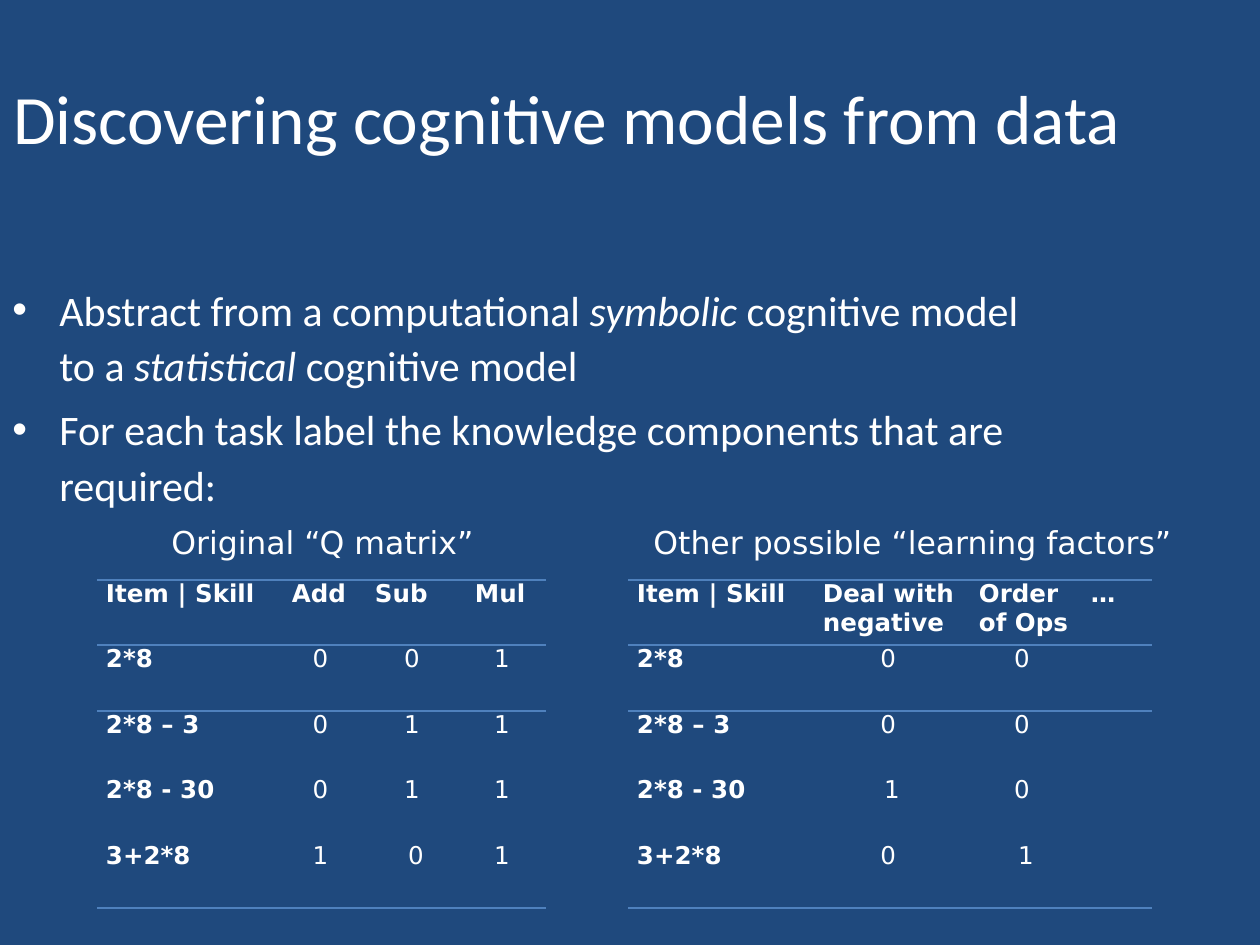
"""Build the slide on discovering cognitive models from data."""
from lxml.etree import SubElement
from pptx import Presentation
from pptx.dml.color import RGBColor
from pptx.enum.text import MSO_ANCHOR, PP_ALIGN
from pptx.oxml.ns import qn
from pptx.util import Pt

PX = 914400 / 126
NAVY = RGBColor(0x1F, 0x49, 0x7D)
WHITE = RGBColor(0xFF, 0xFF, 0xFF)
RULE_BLUE = RGBColor(0x4F, 0x81, 0xBD)
NO_GRID_STYLE = "{2D5ABB26-0587-4C30-8999-92F81FD0307C}"
ROW_HEIGHTS = (65, 66, 65, 66, 66)
TABLE_TOP, CAPTION_TOP = 580, 517


def px(*lengths):
    return [round(length * PX) for length in lengths]


def style(font, name, size, bold=False):
    font.name, font.size, font.bold = name, Pt(size), bold
    font.color.rgb = WHITE


deck = Presentation()
deck.slide_width, deck.slide_height = px(1260, 945)
slide = deck.slides.add_slide(deck.slide_layouts[5])
slide.background.fill.solid()
slide.background.fill.fore_color.rgb = NAVY

title = slide.shapes.title
title.left, title.top, title.width, title.height = px(0, 38, 1134, 157)
title.text_frame.text = "Discovering cognitive models from data"
title.text_frame.vertical_anchor = MSO_ANCHOR.MIDDLE
heading = title.text_frame.paragraphs[0]
heading.alignment = PP_ALIGN.CENTER
style(heading.runs[0].font, "Calibri", 39.6)

points = [
    [("Abstract from a computational ", False), ("symbolic ", True),
     ("cognitive model to a ", False), ("statistical", True),
     (" cognitive model", False)],
    [("For each task label the knowledge components that are required:", False)],
]
body = slide.shapes.add_textbox(*px(0, 273, 1071, 354)).text_frame
body.word_wrap = True
for index, pieces in enumerate(points):
    point = body.add_paragraph() if index else body.paragraphs[0]
    point.line_spacing = 1.1
    point.space_before = Pt(5 if index else 0)
    indent = px(47)[0]
    properties = point._p.get_or_add_pPr()
    properties.set("marL", str(indent))
    properties.set("indent", str(-indent))
    SubElement(properties, qn("a:buFont"), typeface="Arial")
    SubElement(properties, qn("a:buChar"), char="•")
    for words, italic in pieces:
        run = point.add_run()
        run.text = words
        style(run.font, "Calibri", 24)
        run.font.italic = italic

matrices = [
    ("Original “Q matrix”", (159, 350), 97, (186, 83, 100, 80), [
        ("Item | Skill", "Add", "Sub", "Mul"),
        ("2*8", "0 ", "0 ", "1 "),
        ("2*8 – 3", "0 ", "1 ", "1 "),
        ("2*8 - 30", "0 ", "1 ", "1 "),
        ("3+2*8", "1 ", "0", "1 "),
    ]),
    ("Other possible “learning factors”", (641, 548), 628, (186, 156, 112, 70), [
        ("Item | Skill", "Deal with negative", "Order of Ops", "…"),
        ("2*8", "0 ", "0 ", ""),
        ("2*8 – 3", "0 ", "0 ", ""),
        ("2*8 - 30", "1", "0 ", ""),
        ("3+2*8", "0 ", "1", ""),
    ]),
]
for caption, (caption_left, caption_width), left, widths, rows in matrices:
    label = slide.shapes.add_textbox(
        *px(caption_left, CAPTION_TOP, caption_width, 50)).text_frame
    label.word_wrap = True
    label.text = caption
    style(label.paragraphs[0].runs[0].font, "DejaVu Sans", 18)

    matrix = slide.shapes.add_table(
        len(rows), len(widths),
        *px(left, TABLE_TOP, sum(widths), sum(ROW_HEIGHTS))).table
    matrix.horz_banding = False
    matrix._tbl.tblPr.find(qn("a:tableStyleId")).text = NO_GRID_STYLE
    for column, width in zip(matrix.columns, px(*widths)):
        column.width = width
    for row, height in zip(matrix.rows, px(*ROW_HEIGHTS)):
        row.height = height

    for r, values in enumerate(rows):
        ruled_sides = {0: ("lnT", "lnB"), 1: ("lnT",), len(rows) - 1: ("lnB",)}
        for c, value in enumerate(values):
            cell = matrix.cell(r, c)
            cell.margin_left, cell.margin_right = px(9, 9)
            cell.margin_top = cell.margin_bottom = 0
            for side in ruled_sides.get(r, ()):
                rule = SubElement(cell._tc.get_or_add_tcPr(), qn(f"a:{side}"), w="12700")
                paint = SubElement(rule, qn("a:solidFill"))
                SubElement(paint, qn("a:srgbClr"), val=str(RULE_BLUE))
            cell.fill.background()
            cell.text = value
            entry = cell.text_frame.paragraphs[0]
            is_header = r == 0 or c == 0
            entry.alignment = PP_ALIGN.LEFT if is_header else PP_ALIGN.CENTER
            for run in entry.runs:
                style(run.font, "DejaVu Sans", 14, is_header)

deck.save("out.pptx")
